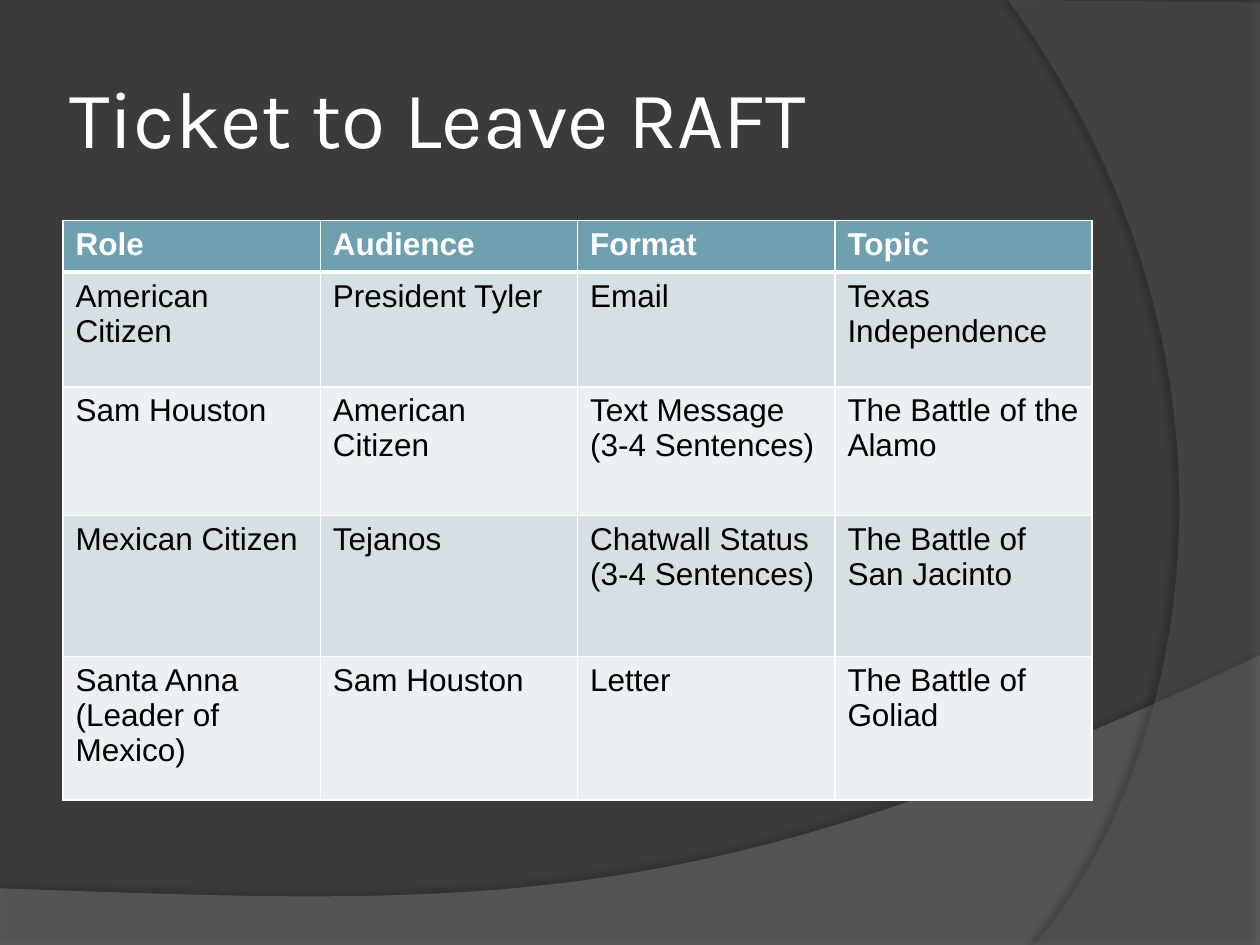
from dataclasses import dataclass

from lxml.etree import SubElement
from pptx import Presentation
from pptx.dml.color import RGBColor as Color
from pptx.enum.text import MSO_ANCHOR as Anchor, MSO_AUTO_SIZE as AutoSize, PP_ALIGN as Align
from pptx.oxml import parse_xml
from pptx.oxml.ns import nsdecls, qn
from pptx.util import Inches, Pt


@dataclass(frozen=True)
class Theme:
    """Colours, fonts and type sizes of the deck."""
    backdrop: str = "3B3B3B"
    wave: str = "7F7F7F"
    arc: str = "5E5E5E"
    light: str = "FFFFFF"
    dark: str = "000000"
    header: str = "6EA0B0"
    bands: tuple = ("D5DFE4", "EBF0F2")
    title_font: str = "Karla"
    body_font: str = "Arial"
    title_size: int = 46
    body_size: int = 18


THEME = Theme()
WIDTH, HEIGHT = 10, 7.5
LEFT, TABLE_TOP, CONTENT_WIDTH = 0.5, 1.75, 8.17
ROW_HEIGHTS = (0.41, 0.91, 1.02, 1.12, 1.14)
ROWS = (
    ("Role", "Audience", "Format", "Topic"),
    ("American Citizen", "President Tyler", "Email", "Texas Independence"),
    ("Sam Houston", "American Citizen", "Text Message (3-4 Sentences)", "The Battle of the Alamo"),
    ("Mexican Citizen", "Tejanos", "Chatwall Status (3-4 Sentences)", "The Battle of San Jacinto"),
    ("Santa Anna (Leader of Mexico)", "Sam Houston", "Letter", "The Battle of Goliad"),
)


def rgb(code):
    """Turn a hex code into a colour."""
    return Color.from_string(code)


def curve(start, pull_a, pull_b, end, steps=60):
    """Return points along a cubic curve."""
    weights = [((1 - t) ** 3, 3 * t * (1 - t) ** 2, 3 * t * t * (1 - t), t ** 3)
               for t in (step / steps for step in range(steps + 1))]
    knots = (start, pull_a, pull_b, end)
    return [tuple(sum(w * knot[axis] for w, knot in zip(row, knots)) for axis in (0, 1))
            for row in weights]


def add_sweep(page, points, colour, opacity, shade, distance, angle):
    """Draw a translucent shadowed outline behind the title."""
    first, *rest = [(Inches(x), Inches(y)) for x, y in points]
    builder = page.shapes.build_freeform(*first)
    builder.add_line_segments(rest, close=True)
    sweep = builder.convert_to_shape()
    sweep.fill.solid()
    sweep.fill.fore_color.rgb = rgb(colour)
    sweep.line.fill.background()
    props = sweep.element.spPr
    tint = props.find(qn("a:solidFill"))[0]
    SubElement(tint, qn("a:alpha")).set("val", str(opacity * 1000))
    props.append(parse_xml(
        f'<a:effectLst {nsdecls("a")}><a:outerShdw blurRad="{Pt(4)}" dist="{Pt(distance)}" '
        f'dir="{angle * 60000}" algn="ctr" rotWithShape="0"><a:srgbClr val="{THEME.dark}">'
        f'<a:alpha val="{shade * 1000}"/></a:srgbClr></a:outerShdw></a:effectLst>'))
    page.shapes.title.element.addprevious(sweep.element)


def add_span(para, text, font, size, colour, bold=False):
    """Add one formatted run to a paragraph."""
    span = para.add_run()
    span.text = text
    span.font.name, span.font.size, span.font.bold = font, Pt(size), bold
    span.font.color.rgb = rgb(colour)


def set_title(page, text):
    """Place and fill the title placeholder."""
    box = page.shapes.title
    box.left, box.top, box.width, box.height = map(Inches, (LEFT, 0.3, CONTENT_WIDTH, 1.25))
    frame = box.text_frame
    frame.margin_left = frame.margin_right = frame.margin_top = frame.margin_bottom = Inches(0.05)
    frame.vertical_anchor, frame.word_wrap = Anchor.MIDDLE, True
    frame.auto_size = AutoSize.NONE
    para = frame.paragraphs[0]
    para.alignment = Align.LEFT
    add_span(para, text, THEME.title_font, THEME.title_size, THEME.light)


def set_borders(cell, top, bottom):
    """Rule the four sides of a cell in the light colour."""
    props = cell._tc.get_or_add_tcPr()
    for index, (side, width) in enumerate(zip("LRTB", (1, 1, top, bottom))):
        props.insert(index, parse_xml(
            f'<a:ln{side} {nsdecls("a")} w="{Pt(width)}"><a:solidFill>'
            f'<a:srgbClr val="{THEME.light}"/></a:solidFill></a:ln{side}>'))


def fill_cell(cell, text, row):
    """Write and colour a cell according to its row."""
    heading = row == 0
    cell.fill.solid()
    cell.fill.fore_color.rgb = rgb(THEME.header if heading else THEME.bands[(row - 1) % 2])
    add_span(cell.text_frame.paragraphs[0], text, THEME.body_font, THEME.body_size,
             THEME.light if heading else THEME.dark, heading)
    set_borders(cell, 3 if row == 1 else 1, 3 if heading else 1)


def add_grid(page, rows):
    """Add the assignment table with equal columns."""
    table = page.shapes.add_table(
        len(rows), len(rows[0]), Inches(LEFT), Inches(TABLE_TOP),
        Inches(CONTENT_WIDTH), Inches(sum(ROW_HEIGHTS))).table
    for row, (texts, height) in enumerate(zip(rows, ROW_HEIGHTS)):
        table.rows[row].height = Inches(height)
        for column, text in enumerate(texts):
            fill_cell(table.cell(row, column), text, row)


def main():
    """Build and save the deck."""
    deck = Presentation()
    deck.slide_width, deck.slide_height = Inches(WIDTH), Inches(HEIGHT)
    page = deck.slides.add_slide(deck.slide_layouts[5])
    page.background.fill.solid()
    page.background.fill.fore_color.rgb = rgb(THEME.backdrop)
    wave = [(0, 7.51), (WIDTH, 7.51), *curve((WIDTH, 5.2), (5.59, 7.29), (3.91, 7.19), (0, 7.05))]
    arc = [(WIDTH, 0.02), (WIDTH, HEIGHT),
           *curve((8.21, HEIGHT), (9.35, 6.19), (10.18, 3), (8, 0))]
    add_sweep(page, wave, THEME.wave, 45, 35, 3.5, 270)
    add_sweep(page, arc, THEME.arc, 40, 45, 4, 180)
    set_title(page, "Ticket to Leave RAFT")
    add_grid(page, ROWS)
    deck.save("out.pptx")


if __name__ == "__main__":
    main()
